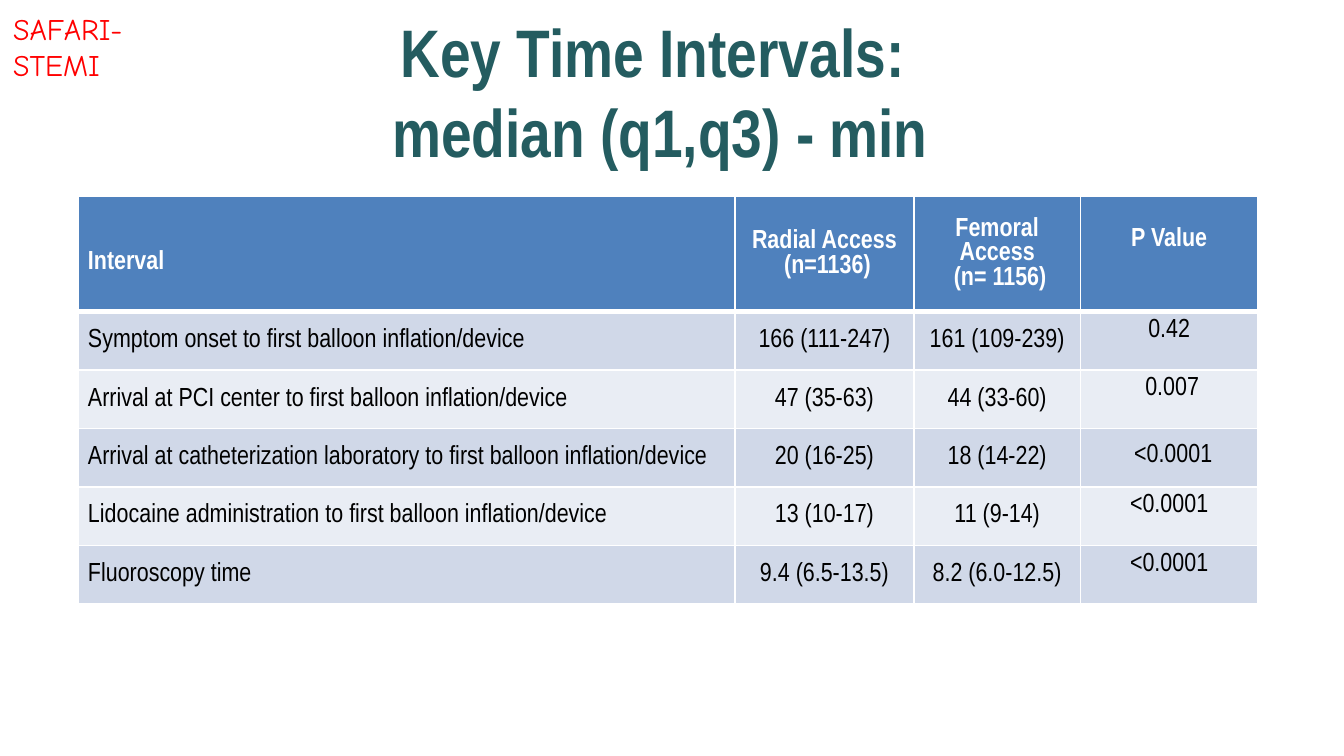
from dataclasses import dataclass

from lxml import etree
from pptx import Presentation
from pptx.dml.color import RGBColor
from pptx.enum.text import MSO_ANCHOR, MSO_AUTO_SIZE, PP_ALIGN
from pptx.oxml.ns import qn
from pptx.util import Pt

PX = 4572  # EMU per px, 200 px to the inch
LEFT, CENTER = PP_ALIGN.LEFT, PP_ALIGN.CENTER
TOP, MIDDLE = MSO_ANCHOR.TOP, MSO_ANCHOR.MIDDLE
NO_AUTOFIT, GROW = MSO_AUTO_SIZE.NONE, MSO_AUTO_SIZE.SHAPE_TO_FIT_TEXT
TITLE_ONLY = 5


@dataclass(frozen=True)
class Theme:
    font: str = "Arial Narrow"
    label_font: str = "Comic Neue"
    title: str = "245C60"
    label: str = "FF0000"
    header: str = "4F81BD"
    header_text: str = "FFFFFF"
    text: str = "000000"
    border: str = "FFFFFF"
    bands: tuple = ("D0D8E8", "E9EDF4")
    title_size: int = 36
    label_size: int = 16
    table_size: int = 14


THEME = Theme()
COLUMNS = [978, 266, 248, 264]
ROW_HEIGHTS = [172] + [87] * 5
ROWS = [
    ["Interval", "Radial Access\n (n=1136)", "Femoral Access\n (n= 1156)", "P Value"],
    ["Symptom onset to first balloon inflation/device",
     "166 (111-247)", "161 (109-239)", "0.42"],
    ["Arrival at PCI center to first balloon inflation/device",
     "47 (35-63)", "44 (33-60)", " 0.007"],
    ["Arrival at catheterization laboratory to first balloon inflation/device",
     "20 (16-25)", "18 (14-22)", "<0.0001"],
    ["Lidocaine administration to first balloon inflation/device",
     "13 (10-17)", "11 (9-14)", "<0.0001"],
    ["Fluoroscopy time", "9.4 (6.5-13.5)", "8.2 (6.0-12.5)", "<0.0001"],
]
# (row, column): left and top margins of the cells whose text sits off the grid
CELL_OFFSETS = {(0, 0): (15, 26), (0, 3): (20, 46), (3, 3): (32, 22)}


def add_run(paragraph, text, font, size, color, bold=False):
    run = paragraph.add_run()
    run.text = text
    run.font.name = font
    run.font.size = Pt(size)
    run.font.bold = bold
    run.font.color.rgb = RGBColor.from_string(color)


def place(shape, box):
    shape.left, shape.top, shape.width, shape.height = (PX * length for length in box)


def add_title(slide, box, lines):
    title = slide.shapes.title
    place(title, box)
    frame = title.text_frame
    frame.word_wrap = True
    frame.auto_size = NO_AUTOFIT
    frame.vertical_anchor = MIDDLE
    paragraph = frame.paragraphs[0]
    paragraph.alignment = CENTER
    for index, line in enumerate(lines):
        if index:
            paragraph.add_line_break()
        add_run(paragraph, line, THEME.font, THEME.title_size, THEME.title, True)


def add_study_label(slide, box, text):
    label = slide.shapes.add_textbox(*(PX * length for length in box))
    frame = label.text_frame
    frame.word_wrap = True
    frame.auto_size = GROW
    add_run(frame.paragraphs[0], text, THEME.label_font, THEME.label_size, THEME.label)


def set_borders(cell, bottom_width):
    """Insert the four cell borders ahead of the fill, as the schema requires."""
    properties = cell._tc.get_or_add_tcPr()
    widths = {"a:lnL": 1, "a:lnR": 1, "a:lnT": 1, "a:lnB": bottom_width}
    for index, (tag, width) in enumerate(widths.items()):
        line = etree.Element(qn(tag), w=str(Pt(width)))
        fill = etree.SubElement(line, qn("a:solidFill"))
        etree.SubElement(fill, qn("a:srgbClr"), val=THEME.border)
        properties.insert(index, line)


def fill_cell(cell, row, column, text):
    header = row == 0
    last = column == len(COLUMNS) - 1
    fill = THEME.header if header else THEME.bands[(row - 1) % 2]
    cell.fill.solid()
    cell.fill.fore_color.rgb = RGBColor.from_string(fill)
    side, vertical = (20, 10) if last else (15, 0)
    left, top = CELL_OFFSETS.get((row, column), (side, vertical))
    cell.margin_left, cell.margin_right = PX * left, PX * side
    cell.margin_top, cell.margin_bottom = PX * top, PX * vertical
    cell.vertical_anchor = TOP if last else MIDDLE
    frame = cell.text_frame
    for index, line in enumerate(text.split("\n")):
        paragraph = frame.add_paragraph() if index else frame.paragraphs[0]
        paragraph.alignment = CENTER if column else LEFT
        color = THEME.header_text if header else THEME.text
        add_run(paragraph, line, THEME.font, THEME.table_size, color, header)
    set_borders(cell, 3 if header else 1)


def add_interval_table(slide, box):
    frame = slide.shapes.add_table(
        len(ROWS), len(COLUMNS), *(PX * length for length in box))
    table = frame.table
    for column, width in zip(table.columns, COLUMNS):
        column.width = PX * width
    for row, height in zip(table.rows, ROW_HEIGHTS):
        row.height = PX * height
    for row, texts in enumerate(ROWS):
        for column, text in enumerate(texts):
            fill_cell(table.cell(row, column), row, column, text)


def main():
    presentation = Presentation()
    presentation.slide_width, presentation.slide_height = PX * 2000, PX * 1125
    slide = presentation.slides.add_slide(presentation.slide_layouts[TITLE_ONLY])
    add_title(slide, (48, 49, 1846, 172), ["Key Time Intervals:", " median (q1,q3) - min"])
    add_interval_table(slide, (116, 292, sum(COLUMNS), sum(ROW_HEIGHTS)))
    add_study_label(slide, (0, 6, 256, 74), "SAFARI-STEMI")
    presentation.save("out.pptx")


if __name__ == "__main__":
    main()
